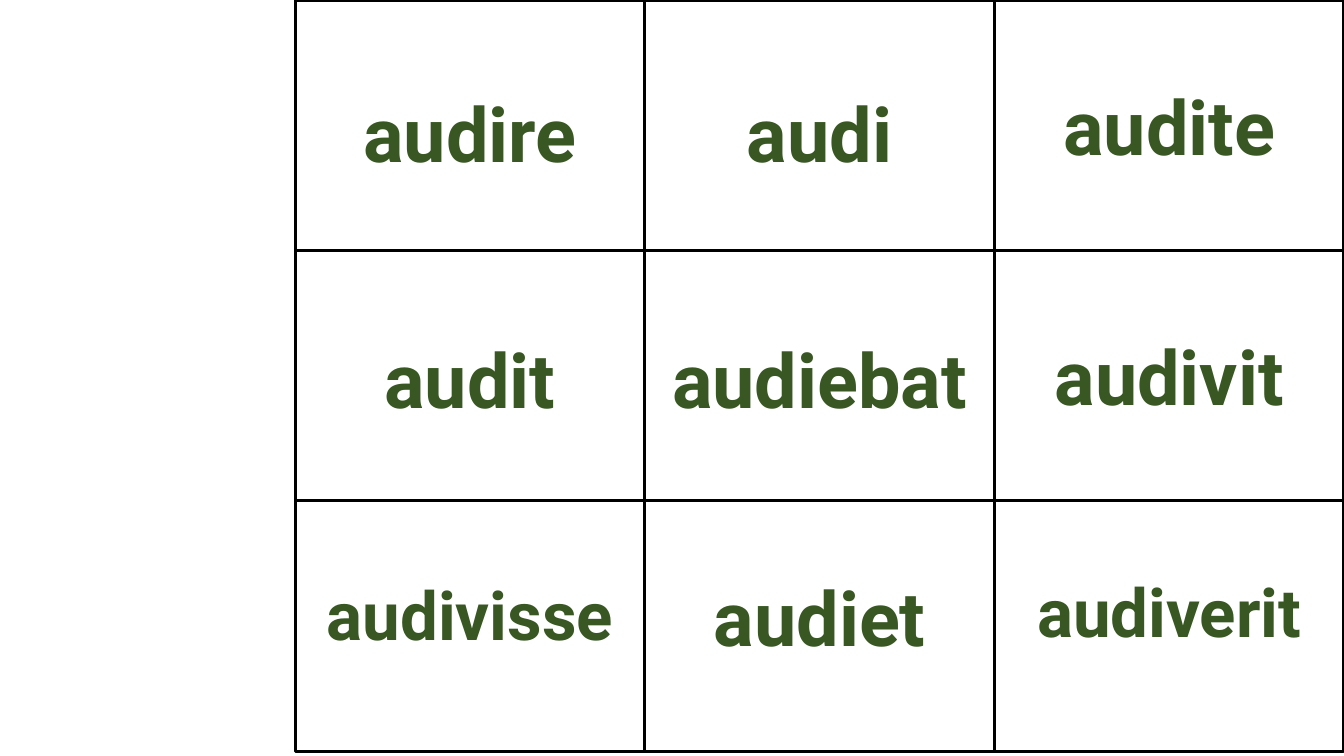
from lxml import etree
from pptx import Presentation
from pptx.dml.color import RGBColor
from pptx.enum.shapes import MSO_SHAPE
from pptx.enum.text import MSO_AUTO_SIZE, PP_ALIGN
from pptx.oxml.ns import qn
from pptx.util import Cm, Pt

RECTANGLE = MSO_SHAPE.RECTANGLE
GROW = MSO_AUTO_SIZE.SHAPE_TO_FIT_TEXT
CENTER = PP_ALIGN.CENTER

# Each verb form: word, distance below the top of its cell in cm, size in points
VERB_ROWS = [
    [("audire", 2.06, 54), ("audi", 2.06, 54), ("audite", 1.88, 54)],
    [("audit", 1.95, 54), ("audiebat", 1.95, 54), ("audivit", 1.87, 54)],
    [("audivisse", 1.71, 48), ("audiet", 1.63, 54), ("audiverit", 1.63, 48)],
]
COLORS = {"border": "000000", "word": "385723"}
FONT = "Roboto"
GRID_LEFT, CELL_WIDTH, CELL_HEIGHT = 7.44, 8.81, 6.31
WORD_HEIGHTS = {54: 2.57, 48: 2.31}


def add_cell(slide, left, top):
    cell = slide.shapes.add_shape(
        RECTANGLE, Cm(left), Cm(top), Cm(CELL_WIDTH), Cm(CELL_HEIGHT))
    cell.shadow.inherit = False
    cell.fill.background()
    cell.line.color.rgb = RGBColor.from_string(COLORS["border"])
    cell.line.width = Pt(2.25)


def add_word(slide, text, left, top, size, color=COLORS["word"], outline=1.75):
    box = slide.shapes.add_textbox(
        Cm(left), Cm(top), Cm(CELL_WIDTH), Cm(WORD_HEIGHTS[size]))
    frame = box.text_frame
    frame.word_wrap = True
    frame.auto_size = GROW
    para = frame.paragraphs[0]
    para.alignment = CENTER
    span = para.add_run()
    span.text = text
    span.font.name = FONT
    span.font.size = Pt(size)
    span.font.bold = True
    span.font.color.rgb = RGBColor.from_string(color)

    # The letter outline comes before the fill in the run properties
    line = etree.Element(qn("a:ln"), w=str(Pt(outline)))
    fill = etree.SubElement(line, qn("a:solidFill"))
    etree.SubElement(fill, qn("a:srgbClr"), val=color)
    span.font._element.insert(0, line) if hasattr(span.font, "_element") \
        else span._r.get_or_add_rPr().insert(0, line)


def main():
    deck = Presentation()
    deck.slide_width, deck.slide_height = Cm(33.87), Cm(19.05)
    slide = deck.slides.add_slide(deck.slide_layouts[6])

    # Grid of cells, each with its verb form
    for row, verbs in enumerate(VERB_ROWS):
        for column, (text, offset, size) in enumerate(verbs):
            left = GRID_LEFT + column * CELL_WIDTH
            top = row * CELL_HEIGHT
            add_cell(slide, left, top)
            add_word(slide, text, left, top + offset, size)

    deck.save("out.pptx")


if __name__ == "__main__":
    main()
